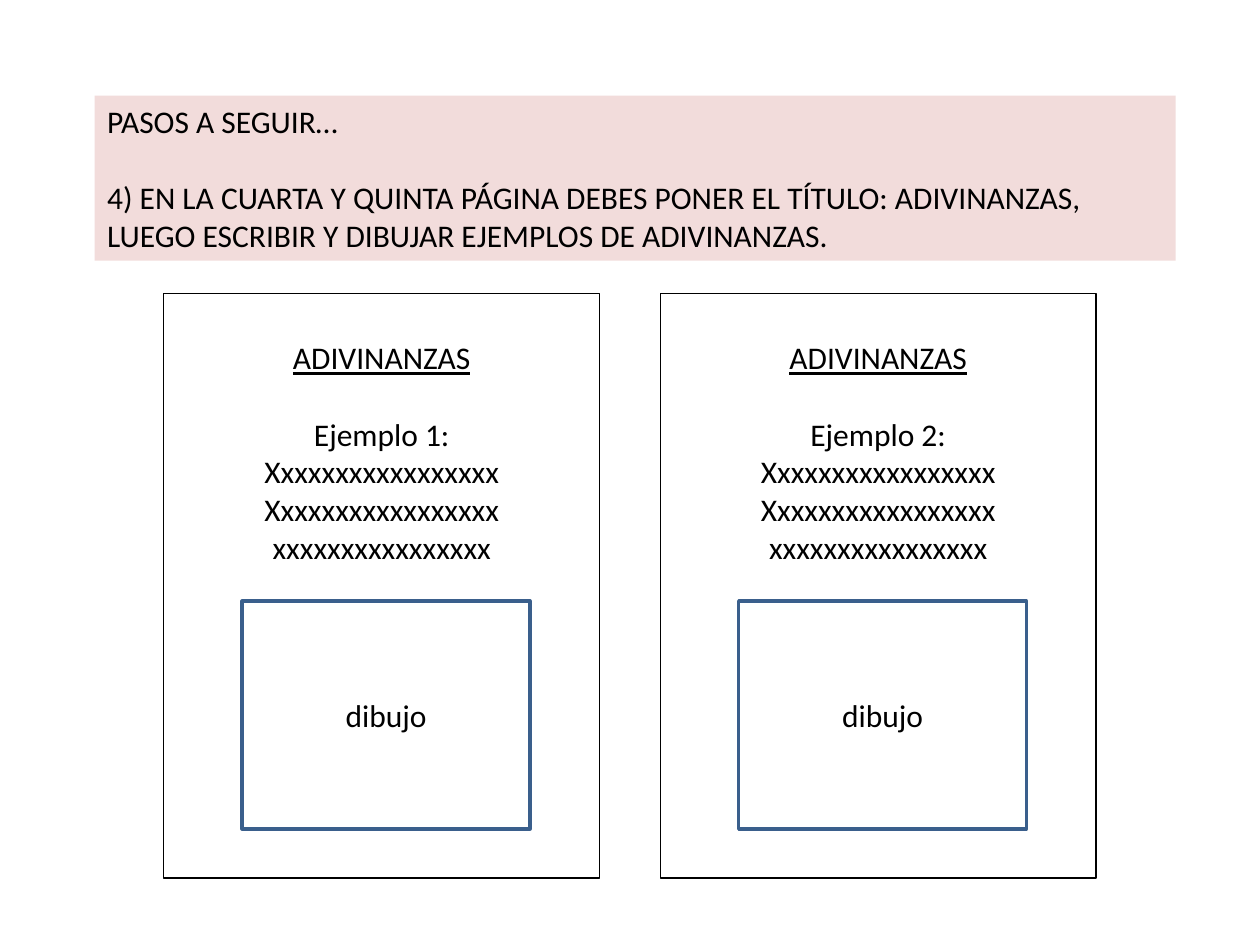
from pptx import Presentation
from pptx.dml.color import RGBColor
from pptx.enum.shapes import MSO_SHAPE
from pptx.enum.text import MSO_ANCHOR, MSO_AUTO_SIZE, PP_ALIGN
from pptx.util import Inches, Pt

BLANK_LINE = Pt(22)
RIDDLE_LINES = ["Xxxxxxxxxxxxxxxxx", "Xxxxxxxxxxxxxxxxx", "xxxxxxxxxxxxxxxx"]


def paint(part, hex_color):
    """Give a fill or line a solid colour."""
    part.fill.solid()
    part.fill.fore_color.rgb = RGBColor.from_string(hex_color)


def place(shape, box):
    """Move a shape to a box of left, top, width and height in inches."""
    shape.left, shape.top, shape.width, shape.height = map(Inches, box)


def write(shape, lines, align, anchor=MSO_ANCHOR.TOP):
    """Write one paragraph per line in black Calibri and return the paragraphs."""
    frame = shape.text_frame
    frame.word_wrap = True
    frame.auto_size = MSO_AUTO_SIZE.NONE
    frame.vertical_anchor = anchor
    frame.text = "\n".join(lines)
    for para in frame.paragraphs:
        para.alignment = align
        para.font.name = "Calibri"
        para.font.size = Pt(18)
        para.font.color.rgb = RGBColor.from_string("000000")
    return frame.paragraphs


def add_frame(page, box, line_color, line_width):
    """Add a white rectangle with an outline."""
    frame = page.shapes.add_shape(MSO_SHAPE.RECTANGLE, *map(Inches, box))
    frame.shadow.inherit = False
    paint(frame, "FFFFFF")
    paint(frame.line, line_color)
    frame.line.width = Pt(line_width)
    return frame


def add_instructions(page, box):
    """Set the pink heading with the step to follow."""
    title = page.shapes.title
    place(title, box)
    paint(title, "F2DCDB")
    paras = write(title, [
        "PASOS A SEGUIR…",
        "4) EN LA CUARTA Y QUINTA PÁGINA DEBES PONER EL TÍTULO: ADIVINANZAS, "
        "LUEGO ESCRIBIR Y DIBUJAR EJEMPLOS DE ADIVINANZAS.",
    ], PP_ALIGN.LEFT)
    paras[1].space_before = BLANK_LINE


def add_riddle_page(page, box, number):
    """Draw a sample booklet page with a riddle and a drawing area."""
    left, top, width, height = box
    sheet = add_frame(page, box, "000000", 0.75)
    sheet.text_frame.margin_top = Inches(0.05) + BLANK_LINE
    lines = ["ADIVINANZAS", f"Ejemplo {number}:", *RIDDLE_LINES]
    paras = write(sheet, lines, PP_ALIGN.CENTER)
    paras[0].font.underline = True
    paras[1].space_before = BLANK_LINE
    drawing_box = (left + 0.18 * width, top + 0.526 * height,
                   0.66 * width, 0.39 * height)
    drawing = add_frame(page, drawing_box, "3A5F8C", 2)
    write(drawing, ["dibujo"], PP_ALIGN.CENTER, MSO_ANCHOR.MIDDLE)


def main():
    """Build the slide and save it."""
    deck = Presentation()
    deck.slide_width, deck.slide_height = Inches(10), Inches(7.5)
    page = deck.slides.add_slide(deck.slide_layouts[5])
    add_instructions(page, (0.75, 0.76, 8.58, 1.31))
    first_left, pitch = 1.3, 3.94
    for index in range(2):
        box = (first_left + index * pitch, 2.33, 3.46, 4.64)
        add_riddle_page(page, box, index + 1)
    deck.save("out.pptx")


if __name__ == "__main__":
    main()
